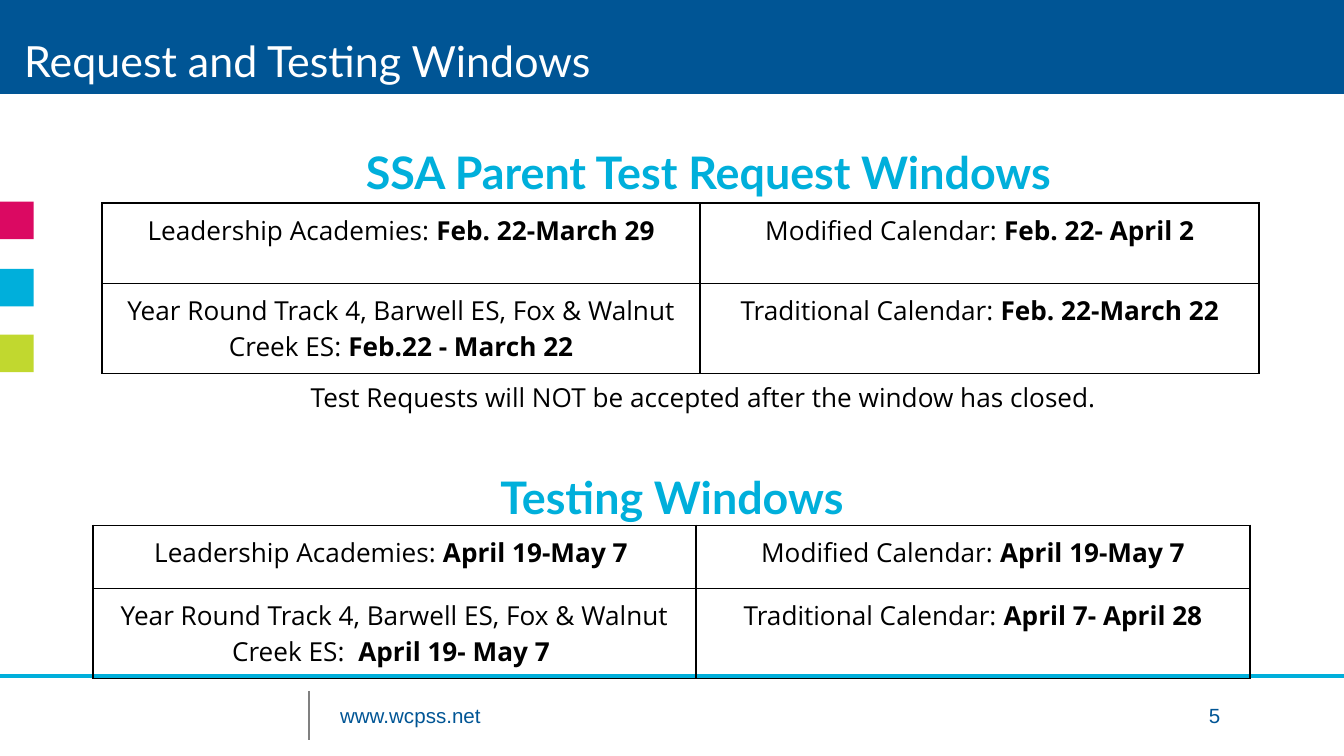
import pptx
import pptx.dml.color
import pptx.enum.shapes
import pptx.enum.text
import pptx.oxml
import pptx.oxml.ns
import pptx.util
from pptx.util import Inches

BLUE, CYAN, PINK, LIME = "005595", "00AFDB", "DB0962", "C1D82F"
BLACK, WHITE, GRAY = "000000", "FFFFFF", "808080"
CENTER = pptx.enum.text.PP_ALIGN.CENTER
MIDDLE = pptx.enum.text.MSO_ANCHOR.MIDDLE

TITLE = "Request and Testing Windows"
TITLE_FONT = {"name": "Lato", "size": 23, "color": WHITE}
HEADING_FONT = {"name": "Lato", "size": 24, "bold": True, "color": CYAN}
BODY_FONT = {"name": "Open Sans", "size": 14, "bold": False, "color": BLACK}
DATE_FONT = BODY_FONT | {"bold": True}
FOOTER_FONT = {"name": "Arial", "size": 11, "color": BLUE}
PAGE_NUMBER_TAB = 6.55

BARS = [  # colour, left, top, width, height
    (PINK, 0, 1.5, 0.25, 0.28),
    (CYAN, 0, 2, 0.25, 0.28),
    (LIME, 0, 2.49, 0.25, 0.28),
    (BLUE, 0, 0, 10, 0.7),
]
RULES = [  # colour, width in points, start x, start y, end x, end y
    (CYAN, 2, 0, 5.03, 10, 5.03),
    (GRAY, 0.75, 2.3, 5.14, 2.3, 5.51),
]
TEXTS = [  # text, box, font, alignment, anchored in the middle, insets
    ("SSA Parent Test Request Windows", (2.23, 1, 6.08, 0.56),
     HEADING_FONT, CENTER, True, (0.1, 0.1)),
    ("Testing Windows", (1.76, 3.38, 6.48, 0.63),
     HEADING_FONT, CENTER, True, (0.1, 0.1)),
    ("Test Requests will NOT be accepted after the window has closed. ",
     (1.21, 2.74, 8.1, 0.44), BODY_FONT, CENTER, False, (0.1, 0.1)),
    ("www.wcpss.net\t5", (2.49, 5.21, 6.83, 0.21),
     FOOTER_FONT, None, False, (0.04, 0.02)),
]
YEAR_ROUND = "Year Round Track 4, Barwell ES, Fox & Walnut Creek ES: "
TABLES = [
    {"at": (0.76, 1.51), "columns": (4.45, 4.16), "rows": (0.6, 0.67), "cells": [
        [("Leadership Academies: ", "Feb. 22-March 29"),
         ("Modified Calendar: ", "Feb. 22- April 2")],
        [(YEAR_ROUND, "Feb.22 - March 22"),
         ("Traditional Calendar: ", "Feb. 22-March 22")],
    ]},
    {"at": (0.69, 3.91), "columns": (4.49, 4.12), "rows": (0.47, 0.67), "cells": [
        [("Leadership Academies: ", "April 19-May 7 "),
         ("Modified Calendar: ", "April 19-May 7")],
        [(YEAR_ROUND + " ", "April 19- May 7 "),
         ("Traditional Calendar: ", "April 7- April 28")],
    ]},
]


def rgb(color):
    return pptx.dml.color.RGBColor.from_string(color)


def add_run(paragraph, text, font):
    run = paragraph.add_run()
    run.text = text
    for key, value in font.items():
        if key == "color":
            run.font.color.rgb = rgb(value)
        else:
            setattr(run.font, key, pptx.util.Pt(value) if key == "size" else value)


def set_insets(target, horizontal, vertical):
    """Set the margins of a text frame or a table cell."""
    target.margin_left = target.margin_right = Inches(horizontal)
    target.margin_top = target.margin_bottom = Inches(vertical)


def add_bar(slide, color, *box):
    shape = slide.shapes.add_shape(
        pptx.enum.shapes.MSO_SHAPE.RECTANGLE, *map(Inches, box))
    shape.shadow.inherit = False
    shape.fill.solid()
    shape.fill.fore_color.rgb = rgb(color)
    shape.line.fill.background()


def add_rule(slide, color, width, *points):
    connector = slide.shapes.add_connector(
        pptx.enum.shapes.MSO_CONNECTOR.STRAIGHT, *map(Inches, points))
    connector.line.color.rgb = rgb(color)
    connector.line.width = pptx.util.Pt(width)
    properties = connector._element.spPr
    properties.append(properties.makeelement(pptx.oxml.ns.qn("a:effectLst"), {}))


def add_right_tab(paragraph, position):
    paragraph._p.get_or_add_pPr().append(pptx.oxml.parse_xml(
        f'<a:tabLst {pptx.oxml.ns.nsdecls("a")}>'
        f'<a:tab pos="{Inches(position)}" algn="r"/></a:tabLst>'))


def add_text(slide, text, box, font, alignment, middle, insets):
    frame = slide.shapes.add_textbox(*map(Inches, box)).text_frame
    frame.word_wrap = True
    set_insets(frame, *insets)
    if middle:
        frame.vertical_anchor = MIDDLE
    paragraph = frame.paragraphs[0]
    paragraph.alignment = alignment
    if "\t" in text:
        add_right_tab(paragraph, PAGE_NUMBER_TAB)
    add_run(paragraph, text, font)


def add_borders(cell):
    properties = cell._tc.get_or_add_tcPr()
    for position, side in enumerate(("lnL", "lnR", "lnT", "lnB")):
        properties.insert(position, pptx.oxml.parse_xml(
            f'<a:{side} {pptx.oxml.ns.nsdecls("a")} w="{pptx.util.Pt(1)}">'
            f'<a:solidFill><a:srgbClr val="{BLACK}"/></a:solidFill></a:{side}>'))


def add_window_table(slide, at, columns, rows, cells):
    size = sum(columns), sum(rows)
    table = slide.shapes.add_table(
        len(rows), len(columns), *map(Inches, at + size)).table
    table.first_row = table.horz_banding = False
    for column, width in zip(table.columns, columns):
        column.width = Inches(width)
    for row, height, contents in zip(table.rows, rows, cells):
        row.height = Inches(height)
        for cell, (group, dates) in zip(row.cells, contents):
            cell.fill.background()
            set_insets(cell, 0.07, 0.07)
            add_borders(cell)
            paragraph = cell.text_frame.paragraphs[0]
            paragraph.alignment = CENTER
            add_run(paragraph, group, BODY_FONT)
            add_run(paragraph, dates, DATE_FONT)


def place_title(slide):
    """Format the title placeholder and bring it in front of the header bar."""
    title = slide.shapes.title
    title.left, title.top, title.width, title.height = map(Inches, (0.14, 0, 9, 0.94))
    frame = title.text_frame
    frame.word_wrap = True
    frame.auto_size = pptx.enum.text.MSO_AUTO_SIZE.NONE
    frame.vertical_anchor = MIDDLE
    set_insets(frame, 0.04, 0.02)
    paragraph = frame.paragraphs[0]
    paragraph.alignment = pptx.enum.text.PP_ALIGN.LEFT
    paragraph.line_spacing = 0.9
    add_run(paragraph, TITLE, TITLE_FONT)
    slide.shapes._spTree.append(title._element)


def main():
    presentation = pptx.Presentation()
    presentation.slide_width = Inches(10)
    presentation.slide_height = Inches(10 * 9 / 16)
    slide = presentation.slides.add_slide(presentation.slide_layouts[5])
    for rule in RULES:
        add_rule(slide, *rule)
    for bar in BARS:
        add_bar(slide, *bar)
    place_title(slide)
    for text in TEXTS:
        add_text(slide, *text)
    for table in TABLES:
        add_window_table(slide, **table)
    presentation.save("out.pptx")


if __name__ == "__main__":
    main()
